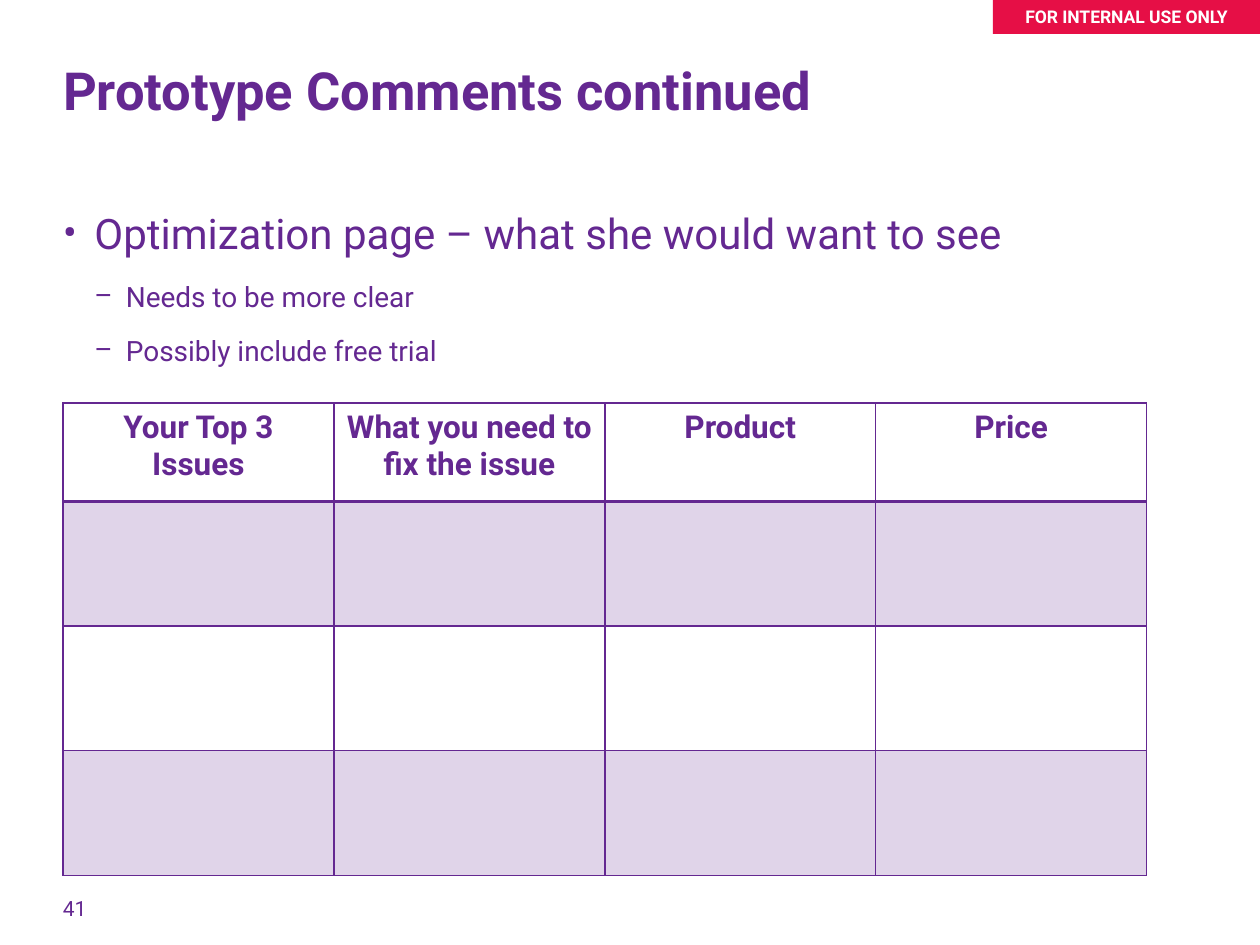
from dataclasses import dataclass

from lxml.etree import SubElement
from pptx import Presentation
from pptx.dml.color import RGBColor
from pptx.enum.shapes import MSO_SHAPE
from pptx.enum.text import MSO_ANCHOR, PP_ALIGN
from pptx.oxml.ns import qn
from pptx.util import Pt

FONT = "Roboto"
PURPLE = "642891"
LILAC = "E0D4E9"
WHITE = "FFFFFF"
RED = "E60F46"


@dataclass(frozen=True)
class Box:
    left: float
    top: float
    width: float
    height: float

    def lengths(self) -> tuple:
        return Pt(self.left), Pt(self.top), Pt(self.width), Pt(self.height)


@dataclass(frozen=True)
class Comment:
    text: str
    size: int
    bullet: str
    indent: int
    level: int = 0


COMMENTS = [
    Comment("Optimization page – what she would want to see", 24, "•", 18),
    Comment("Needs to be more clear", 16, "–", 36, 1),
    Comment("Possibly include free trial", 16, "–", 36, 1),
]
HEADINGS = ["Your Top 3 Issues", "What you need to fix the issue", "Product", "Price"]
ROW_HEIGHTS = [56, 71.3, 71.3, 71.3]
ISSUES_BOX = Box(36, 230.4, 619.2, sum(ROW_HEIGHTS))


def color(value: str) -> RGBColor:
    return RGBColor.from_string(value)


def add_run(paragraph, text: str, size: int, ink: str = PURPLE, bold: bool = False) -> None:
    run = paragraph.add_run()
    run.text = text
    run.font.name = FONT
    run.font.size = Pt(size)
    run.font.bold = bold
    run.font.color.rgb = color(ink)


def set_frame(frame, anchor=MSO_ANCHOR.TOP) -> None:
    frame.word_wrap = True
    frame.vertical_anchor = anchor
    frame.margin_left = frame.margin_right = frame.margin_top = frame.margin_bottom = 0


def add_banner(slide, box: Box, text: str) -> None:
    banner = slide.shapes.add_shape(MSO_SHAPE.RECTANGLE, *box.lengths())
    banner.shadow.inherit = False
    banner.fill.solid()
    banner.fill.fore_color.rgb = color(RED)
    banner.line.fill.background()
    set_frame(banner.text_frame, MSO_ANCHOR.MIDDLE)
    paragraph = banner.text_frame.paragraphs[0]
    paragraph.alignment = PP_ALIGN.CENTER
    add_run(paragraph, text, 10, WHITE, True)


def set_title(slide, box: Box, text: str) -> None:
    title = slide.shapes.title
    title.left, title.top, title.width, title.height = box.lengths()
    set_frame(title.text_frame)
    paragraph = title.text_frame.paragraphs[0]
    paragraph.alignment = PP_ALIGN.LEFT
    paragraph.line_spacing = 0.95
    add_run(paragraph, text, 30, bold=True)


def add_comments(slide, box: Box, comments: list[Comment]) -> None:
    frame = slide.shapes.add_textbox(*box.lengths()).text_frame
    set_frame(frame)
    for index, comment in enumerate(comments):
        paragraph = frame.add_paragraph() if index else frame.paragraphs[0]
        paragraph.level = comment.level
        if index:
            paragraph.space_before = Pt(12)
        properties = paragraph._p.get_or_add_pPr()
        properties.set("marL", str(Pt(comment.indent)))
        properties.set("indent", str(-Pt(18)))
        SubElement(properties, qn("a:buFont"), typeface=FONT)
        SubElement(properties, qn("a:buChar"), char=comment.bullet)
        add_run(paragraph, comment.text, comment.size)


def add_border(cell, side: str, width: float) -> None:
    properties = cell._tc.get_or_add_tcPr()
    line = SubElement(properties, qn(f"a:{side}"), w=str(Pt(width)))
    SubElement(SubElement(line, qn("a:solidFill")), qn("a:srgbClr"), val=PURPLE)


def add_issues(slide, box: Box, headings: list[str], heights: list[float]) -> None:
    table = slide.shapes.add_table(len(heights), len(headings), *box.lengths()).table
    for column in table.columns:
        column.width = Pt(box.width / len(headings))
    for row_index, height in enumerate(heights):
        table.rows[row_index].height = Pt(height)
        for column_index, heading in enumerate(headings):
            cell = table.cell(row_index, column_index)
            add_border(cell, "lnL", 1)
            add_border(cell, "lnR", 1)
            add_border(cell, "lnT", 2 if row_index == 1 else 1)
            add_border(cell, "lnB", 2 if row_index == 0 else 1)
            cell.fill.solid()
            cell.fill.fore_color.rgb = color(LILAC if row_index % 2 else WHITE)
            if row_index == 0:
                paragraph = cell.text_frame.paragraphs[0]
                paragraph.alignment = PP_ALIGN.CENTER
                add_run(paragraph, heading, 18, bold=True)


def add_page_number(slide, box: Box, number: str) -> None:
    frame = slide.shapes.add_textbox(*box.lengths()).text_frame
    set_frame(frame, MSO_ANCHOR.BOTTOM)
    add_run(frame.paragraphs[0], number, 12)


def main() -> None:
    deck = Presentation()
    deck.slide_width, deck.slide_height = Pt(720), Pt(540)
    slide = deck.slides.add_slide(deck.slide_layouts[5])
    add_banner(slide, Box(567.4, 0, 152.6, 19.4), "FOR INTERNAL USE ONLY")
    set_title(slide, Box(36, 36, 648, 72), "Prototype Comments continued")
    add_comments(slide, Box(36, 118.8, 648, 341.3), COMMENTS)
    add_page_number(slide, Box(36, 508.3, 36, 18), "41")
    add_issues(slide, ISSUES_BOX, HEADINGS, ROW_HEIGHTS)
    deck.save("out.pptx")


if __name__ == "__main__":
    main()
